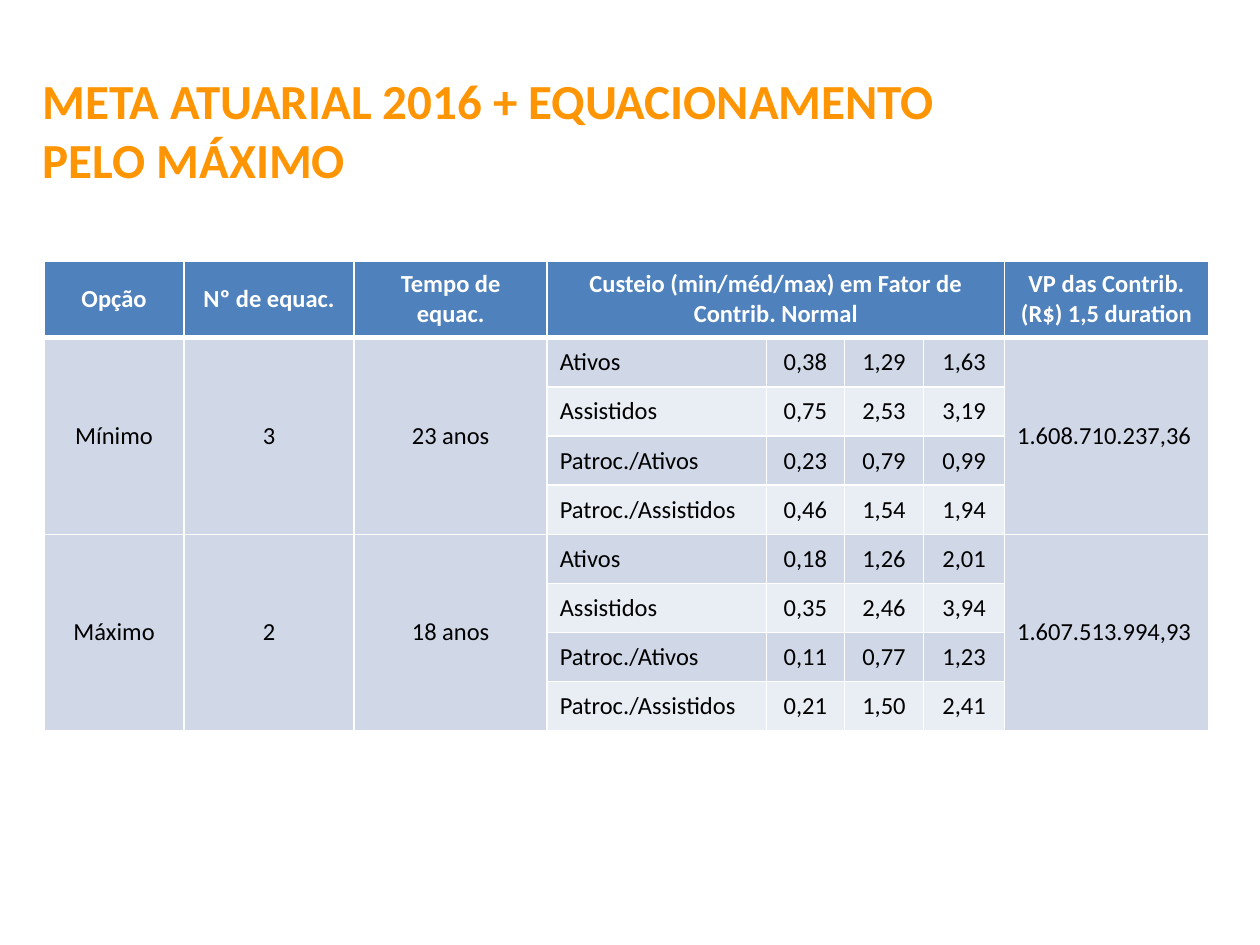
from lxml import etree
from pptx import Presentation
from pptx.dml.color import RGBColor
from pptx.enum.text import MSO_ANCHOR, MSO_AUTO_SIZE, PP_ALIGN
from pptx.oxml.ns import qn
from pptx.util import Cm, Pt

LEFT, CENTER = PP_ALIGN.LEFT, PP_ALIGN.CENTER
MIDDLE = MSO_ANCHOR.MIDDLE
NO_AUTOFIT = MSO_AUTO_SIZE.NONE

COLORS = {
    "title": "FF9502",
    "header": "4F81BD",
    "band_dark": "D0D8E8",
    "band_light": "E9EDF4",
    "white": "FFFFFF",
    "text": "000000",
}

# Table content
HEADERS = {
    0: "Opção",
    1: "Nº de equac.",
    2: "Tempo de equac.",
    3: "Custeio (min/méd/max) em Fator de Contrib. Normal",
    7: "VP das Contrib. (R$) 1,5 duration",
}
GROUPS = ["Ativos", "Assistidos", "Patroc./Ativos", "Patroc./Assistidos"]
OPTIONS = [
    ("Mínimo", "3", "23 anos", "1.608.710.237,36",
     [("0,38", "1,29", "1,63"), ("0,75", "2,53", "3,19"),
      ("0,23", "0,79", "0,99"), ("0,46", "1,54", "1,94")]),
    ("Máximo", "2", "18 anos", "1.607.513.994,93",
     [("0,18", "1,26", "2,01"), ("0,35", "2,46", "3,94"),
      ("0,11", "0,77", "1,23"), ("0,21", "1,50", "2,41")]),
]
COLUMN_WIDTHS = [2.82, 3.43, 3.89, 4.42, 1.57, 1.6, 1.63, 4.11]
HEADER_HEIGHT, ROW_HEIGHT = 1.55, 0.99
GROUP_COLUMN, VALUE_COLUMN = 3, 7


class SlideBuilder:
    font_name = "Calibri"

    def __init__(self, slide):
        self.slide = slide

    def style(self, paragraph, size, color, bold=False, align=LEFT):
        paragraph.alignment = align
        font = paragraph.font
        font.name, font.size, font.bold = self.font_name, Pt(size), bold
        font.color.rgb = RGBColor.from_string(COLORS[color])

    def title(self, text, left, top, width, height):
        title = self.slide.shapes.title
        title.left, title.top = Cm(left), Cm(top)
        title.width, title.height = Cm(width), Cm(height)
        frame = title.text_frame
        frame.text = text
        frame.word_wrap = True
        frame.auto_size = NO_AUTOFIT
        frame.vertical_anchor = MIDDLE
        self.style(frame.paragraphs[0], 28, "title", bold=True)

    def table(self, left, top, widths, heights):
        table = self.slide.shapes.add_table(
            len(heights), len(widths), Cm(left), Cm(top),
            Cm(sum(widths)), Cm(sum(heights))).table
        for column, width in zip(table.columns, widths):
            column.width = Cm(width)
        for row, height in zip(table.rows, heights):
            row.height = Cm(height)
        for r in range(len(heights)):
            for c in range(len(widths)):
                self.borders(table.cell(r, c), header=r == 0, below_header=r == 1)
        return table

    def borders(self, cell, header, below_header):
        properties = cell._tc.get_or_add_tcPr()
        thick = {"lnB": header, "lnT": below_header}
        for side in ("lnL", "lnR", "lnT", "lnB"):
            width = Pt(3 if thick.get(side) else 1)
            line = etree.SubElement(properties, qn(f"a:{side}"), w=str(width))
            fill = etree.SubElement(line, qn("a:solidFill"))
            etree.SubElement(fill, qn("a:srgbClr"), val=COLORS["white"])

    def cell(self, cell, text, fill, color="text", bold=False, align=CENTER):
        cell.text = text
        cell.vertical_anchor = MIDDLE
        cell.fill.solid()
        cell.fill.fore_color.rgb = RGBColor.from_string(COLORS[fill])
        self.style(cell.text_frame.paragraphs[0], 14, color, bold, align)


def main():
    prs = Presentation()
    prs.slide_width, prs.slide_height = Cm(25.4), Cm(19.05)
    builder = SlideBuilder(prs.slides.add_slide(prs.slide_layouts[5]))

    # Title
    builder.title("META ATUARIAL 2016 + EQUACIONAMENTO PELO MÁXIMO",
                  0.61, 1.45, 19.56, 2.31)

    # Table grid
    body_rows = len(OPTIONS) * len(GROUPS)
    table = builder.table(0.89, 5.26, COLUMN_WIDTHS,
                          [HEADER_HEIGHT] + [ROW_HEIGHT] * body_rows)

    # Header row
    table.cell(0, GROUP_COLUMN).merge(table.cell(0, VALUE_COLUMN - 1))
    for column, heading in HEADERS.items():
        builder.cell(table.cell(0, column), heading, "header", "white", bold=True)

    # One block of rows per option
    for index, (option, count, period, present_value, costs) in enumerate(OPTIONS):
        first = 1 + index * len(GROUPS)
        last = first + len(GROUPS) - 1
        merged = {0: option, 1: count, 2: period, VALUE_COLUMN: present_value}
        for column, text in merged.items():
            table.cell(first, column).merge(table.cell(last, column))
            builder.cell(table.cell(first, column), text, "band_dark",
                         align=LEFT if column == VALUE_COLUMN else CENTER)
        for offset, (group, factors) in enumerate(zip(GROUPS, costs)):
            band = "band_light" if offset % 2 else "band_dark"
            row = first + offset
            builder.cell(table.cell(row, GROUP_COLUMN), group, band, align=LEFT)
            for column, factor in enumerate(factors, GROUP_COLUMN + 1):
                builder.cell(table.cell(row, column), factor, band)

    prs.save("out.pptx")


if __name__ == "__main__":
    main()
